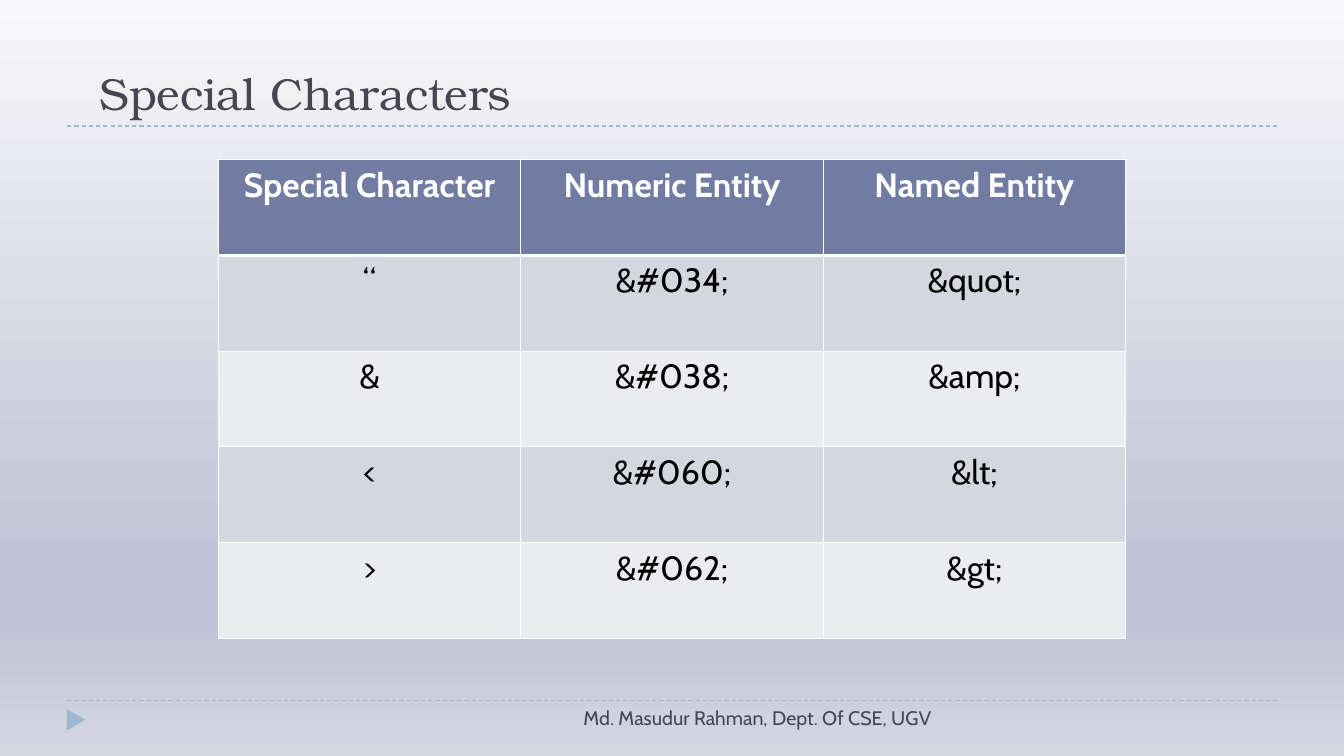
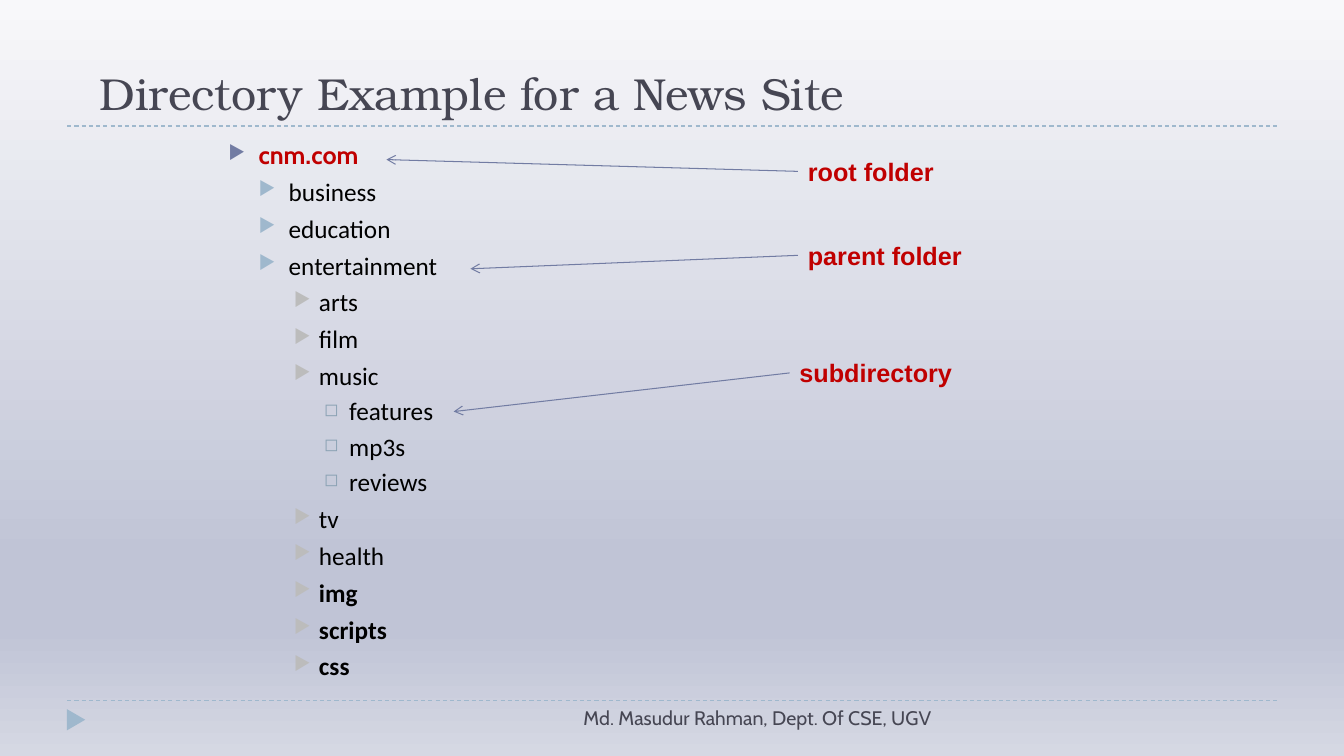
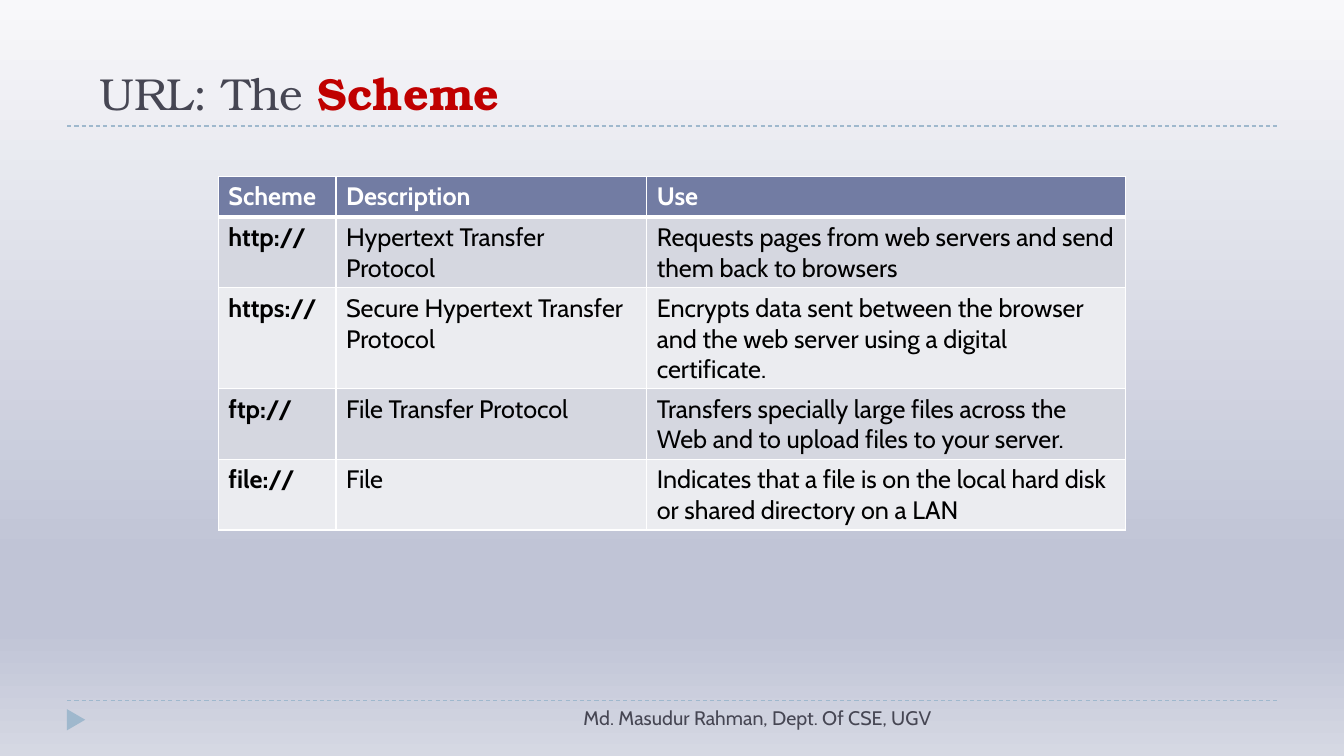
from lxml.etree import SubElement
from pptx import Presentation
from pptx.dml.color import RGBColor as Rgb
from pptx.enum.dml import MSO_LINE
from pptx.enum.shapes import MSO_CONNECTOR, MSO_SHAPE
from pptx.enum.text import MSO_ANCHOR, MSO_AUTO_SIZE, PP_ALIGN
from pptx.oxml.ns import qn
from pptx.util import Pt


class Theme:
    ink, slate, sky, red = "464653", "727CA3", "9FB8CD", "C00000"
    white, black = "FFFFFF", "000000"
    bands = ("D5D7E0", "EBECF0")
    backdrop = ((0, "F8F8FA"), (74, "C0C4D6"), (83, "C0C4D6"), (100, "D5D8E3"))
    title = dict(name="TeX Gyre Bonum", size=Pt(32), bold=False, color=ink)
    keyword = dict(title, bold=True, color=red)
    footer = dict(name="Cabin", size=Pt(14), color=ink)
    cell = dict(name="Cabin", size=Pt(18), bold=False, color=black)
    root = dict(cell, bold=True, color=red)
    folder = dict(cell, name="Calibri")
    label = dict(root, name="Arial")


# Content
FOOTER = "Md. Masudur Rahman, Dept. Of CSE, UGV"

ENTITIES = [
    ("Special Character", "Numeric Entity", "Named Entity"),
    ("“", "&#034;", "&quot;"),
    ("&", "&#038;", "&amp;"),
    ("<", "&#060;", "&lt;"),
    (">", "&#062;", "&gt;"),
]

SCHEMES = [
    ("Scheme", "Description", "Use"),
    ("http://", "Hypertext Transfer Protocol",
     "Requests pages from web servers and send them back to browsers"),
    ("https://", "Secure Hypertext Transfer Protocol",
     "Encrypts data sent between the browser and the web server using a digital certificate."),
    ("ftp://", "File Transfer Protocol",
     "Transfers specially large files across the Web and to upload files to your server."),
    ("file://", "File",
     "Indicates that a file is on the local hard disk or shared directory on a LAN"),
]

# Level and folder name
FOLDERS = [
    (0, "cnm.com"), (1, "business"), (1, "education"), (1, "entertainment"),
    (2, "arts"), (2, "film"), (2, "music"),
    (3, "features"), (3, "mp3s"), (3, "reviews"),
    (2, "tv"), (2, "health"), (2, "img"), (2, "scripts"), (2, "css"),
]
BOLD_FOLDERS = {"img", "scripts", "css"}

# Bullet, colour, size in percent, hanging indent, space before
LEVELS = [
    ("▶", Theme.slate, 76, 21.6, 6),
    ("▶", Theme.sky, 76, 21.6, 4.7),
    ("▶", "BCBCBC", 76, 18, 4.7),
    ("◻", "8BA2B4", 70, 18, 3.7),
]
LEVEL_STEP = 21.6

# Label, left, top, width, arrow tip
CALLOUTS = [
    ("root folder", 570, 108, 105, (276, 114)),
    ("parent folder", 570, 168, 125, (336, 192)),
    ("subdirectory", 564, 252, 125, (324, 294)),
]
LABEL_HEIGHT = 28.8
TABLE_LEFT = 156


# Helpers
def apply_format(font, values):
    for key, value in values.items():
        if key == "color":
            font.color.rgb = Rgb.from_string(value)
        else:
            setattr(font, key, value)


def add_run(paragraph, text, values):
    run = paragraph.add_run()
    run.text = text
    apply_format(run.font, values)


def add_frame(slide, *box, **settings):
    frame = slide.shapes.add_textbox(*map(Pt, box)).text_frame
    for key, value in dict(word_wrap=True, **settings).items():
        setattr(frame, key, value)
    return frame


def add_line(slide, start, end, color, dashed=False, arrow=False):
    line = slide.shapes.add_connector(MSO_CONNECTOR.STRAIGHT, *map(Pt, (*start, *end)))
    line.line.color.rgb = Rgb.from_string(color)
    line.line.width = Pt(0.75)
    if dashed:
        line.line.dash_style = MSO_LINE.DASH
    properties = line._element.spPr
    if arrow:
        SubElement(properties.find(qn("a:ln")), qn("a:tailEnd"), type="arrow")
    SubElement(properties, qn("a:effectLst"))


def set_backdrop(master):
    fill = master.background.fill
    fill.gradient()
    fill.gradient_angle = 270
    stops = fill._fill._gradFill.find(qn("a:gsLst"))
    for stop in list(stops):
        stops.remove(stop)
    for percent, color in Theme.backdrop:
        stop = SubElement(stops, qn("a:gs"), pos=str(percent * 1000))
        SubElement(stop, qn("a:srgbClr"), val=color)


def add_base(deck, *title_runs):
    """Slide with title, dashed rules, marker and footer."""
    slide = deck.slides.add_slide(deck.slide_layouts[6])
    for y in (500.4, 90):
        add_line(slide, (48, y), (912, y), Theme.sky, dashed=True)
    marker = slide.shapes.add_shape(
        MSO_SHAPE.ISOSCELES_TRIANGLE, *map(Pt, (46.8, 507.6, 15.1, 13)))
    marker.rotation = 90
    marker.shadow.inherit = False
    marker.fill.solid()
    marker.fill.fore_color.rgb = Rgb.from_string(Theme.sky)
    marker.line.fill.background()
    title = add_frame(slide, 64, 10.8, 864, 77.8, vertical_anchor=MSO_ANCHOR.BOTTOM)
    for text, values in title_runs:
        add_run(title.paragraphs[0], text, values)
    footer = add_frame(slide, 304.6, 500.4, 368, 28.8).paragraphs[0]
    footer.alignment = PP_ALIGN.RIGHT
    add_run(footer, FOOTER, Theme.footer)
    return slide


def add_borders(cell, bottom):
    properties = cell._tc.get_or_add_tcPr()
    for side, width in (("L", 1), ("R", 1), ("T", 1), ("B", bottom)):
        border = SubElement(properties, qn(f"a:ln{side}"), w=str(Pt(width)))
        SubElement(SubElement(border, qn("a:solidFill")), qn("a:srgbClr"), val=Theme.white)


def add_grid(slide, rows, top, widths, heights, size, align, bold_first=False):
    table = slide.shapes.add_table(
        len(rows), len(widths),
        *map(Pt, (TABLE_LEFT, top, sum(widths), sum(heights)))).table
    table.horz_banding = False
    for column, width in zip(table.columns, widths):
        column.width = Pt(width)
    for r, (texts, height) in enumerate(zip(rows, heights)):
        table.rows[r].height = Pt(height)
        header = r == 0
        fill = Theme.slate if header else Theme.bands[(r - 1) % 2]
        # Borders above the header rule match its weight on both sides
        for c, text in enumerate(texts):
            cell = table.cell(r, c)
            add_borders(cell, 3 if header else 1)
            if r == 1:
                cell._tc.tcPr.find(qn("a:lnT")).set("w", str(Pt(3)))
            cell.fill.solid()
            cell.fill.fore_color.rgb = Rgb.from_string(fill)
            paragraph = cell.text_frame.paragraphs[0]
            paragraph.alignment = align
            add_run(paragraph, text, dict(
                Theme.cell, size=Pt(size),
                bold=header or (bold_first and c == 0),
                color=Theme.white if header else Theme.black))


def add_folder(paragraph, level, name, first):
    char, color, percent, hanging, space = LEVELS[level]
    properties = paragraph._p.get_or_add_pPr()
    properties.set("marL", str(Pt(LEVEL_STEP * (level + 1))))
    properties.set("indent", str(-Pt(hanging)))
    SubElement(SubElement(properties, qn("a:buClr")), qn("a:srgbClr"), val=color)
    SubElement(properties, qn("a:buSzPct"), val=str(percent * 1000))
    SubElement(properties, qn("a:buChar"), char=char)
    paragraph.level = level
    if not first:
        paragraph.space_before = Pt(space)
    values = Theme.folder if level else Theme.root
    add_run(paragraph, name, dict(values, bold=not level or name in BOLD_FOLDERS))


# Slides
def build_entities(deck):
    slide = add_base(deck, ("Special Characters", Theme.title))
    add_grid(slide, ENTITIES, 114, [216] * 3, [68.4] * len(ENTITIES), 24, PP_ALIGN.CENTER)


def build_directory(deck):
    slide = add_base(deck, ("Directory Example for a News Site", Theme.title))
    tree = add_frame(slide, TABLE_LEFT, 96, 648, 388.8)
    for i, (level, name) in enumerate(FOLDERS):
        paragraph = tree.add_paragraph() if i else tree.paragraphs[0]
        add_folder(paragraph, level, name, first=i == 0)
    for text, left, top, width, tip in CALLOUTS:
        label = add_frame(slide, left, top, width, LABEL_HEIGHT,
                          auto_size=MSO_AUTO_SIZE.SHAPE_TO_FIT_TEXT)
        label.word_wrap = False
        add_run(label.paragraphs[0], text, Theme.label)
        add_line(slide, (left, top + LABEL_HEIGHT / 2), tip, Theme.slate, arrow=True)


def build_schemes(deck):
    slide = add_base(deck, ("URL: The ", Theme.title), ("Scheme", Theme.keyword))
    add_grid(slide, SCHEMES, 126, [84, 222, 342], [29.2] + [50.4] * 4, 18,
             PP_ALIGN.LEFT, bold_first=True)


def main():
    deck = Presentation()
    deck.slide_width, deck.slide_height = Pt(960), Pt(540)
    set_backdrop(deck.slide_master)
    for build in (build_entities, build_directory, build_schemes):
        build(deck)
    deck.save("out.pptx")


if __name__ == "__main__":
    main()
